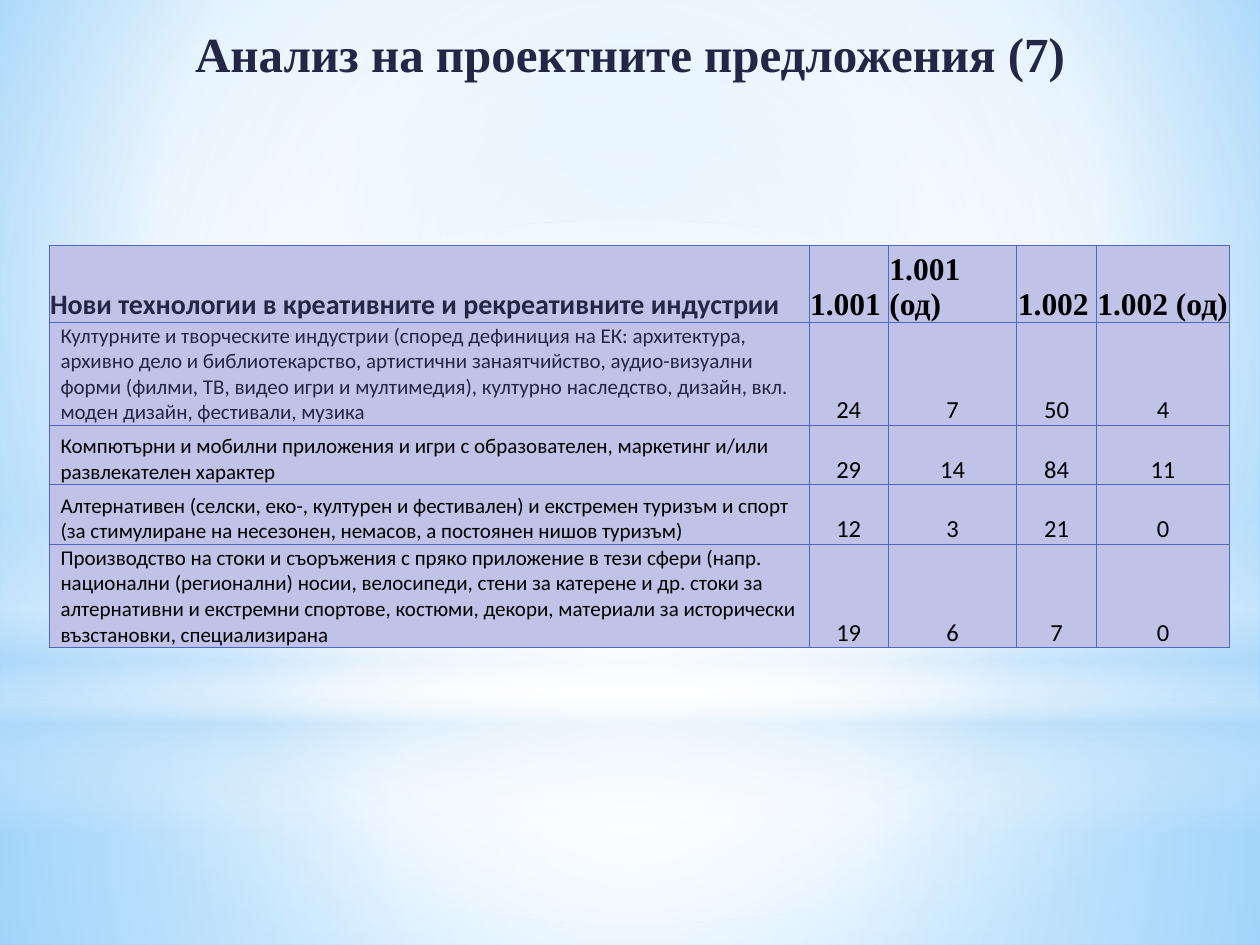
from lxml import etree
from pptx import Presentation
from pptx.dml.color import RGBColor
from pptx.enum.shapes import MSO_SHAPE
from pptx.enum.text import MSO_ANCHOR, PP_ALIGN
from pptx.oxml.ns import qn
from pptx.util import Cm, Pt

RECT, OVAL = MSO_SHAPE.RECTANGLE, MSO_SHAPE.OVAL
LEFT, MID = PP_ALIGN.LEFT, PP_ALIGN.CENTER
LOW, HALF = MSO_ANCHOR.BOTTOM, MSO_ANCHOR.MIDDLE

HUES = {
    "navy": "212745", "black": "000000", "white": "FFFFFF", "lilac": "C1C2E8",
    "line": "4E67C8", "sky": "B4DCFA", "pale": "9ED5FF", "blue": "5BB9FF",
}
SERIF, SANS = "Times New Roman", "Calibri"

HEAD = ["Нови технологии в креативните и рекреативните индустрии",
        "1.001", "1.001 (од)", "1.002", "1.002 (од)"]
BODY = [
    ["Културните и творческите индустрии (според дефиниция на ЕК: архитектура, "
     "архивно дело и библиотекарство, артистични занаятчийство, аудио-визуални "
     "форми (филми, ТВ, видео игри и мултимедия), културно наследство, дизайн, вкл. "
     "моден дизайн, фестивали, музика", "24", "7", "50", "4"],
    ["Компютърни и мобилни приложения и игри с образователен, маркетинг и/или "
     "развлекателен характер", "29", "14", "84", "11"],
    ["Алтернативен (селски, еко-, културен и фестивален) и екстремен туризъм и спорт "
     "(за стимулиране на несезонен, немасов, а постоянен нишов туризъм)",
     "12", "3", "21", "0"],
    ["Производство на стоки и съоръжения с пряко приложение в тези сфери (напр. "
     "национални (регионални) носии, велосипеди, стени за катерене и др. стоки за "
     "алтернативни и екстремни спортове, костюми, декори, материали за исторически "
     "възстановки, специализирана", "19", "6", "7", "0"],
]
COLS = [15.32, 1.6, 2.59, 1.6, 2.69]
ROWS = [1.43, 2.08, 1.2, 1.2, 2.08]
CORE = (50, 50, 50, 50)


class Deck:
    def __init__(self, wide, high):
        self.file = Presentation()
        self.file.slide_width, self.file.slide_height = Cm(wide), Cm(high)
        self.slide = self.file.slides.add_slide(self.file.slide_layouts[6])

    def blend(self, host, stops, core=None):
        grad = etree.Element(qn("a:gradFill"), rotWithShape="1")
        group = etree.SubElement(grad, qn("a:gsLst"))
        for place, hue, solid in stops:
            stop = etree.SubElement(group, qn("a:gs"), pos=str(place * 1000))
            tint = etree.SubElement(stop, qn("a:srgbClr"), val=HUES[hue])
            if solid < 100:
                etree.SubElement(tint, qn("a:alpha"), val=str(solid * 1000))
        if core:
            ring = etree.SubElement(grad, qn("a:path"), path="circle")
            sides = {side: str(n * 1000) for side, n in zip("ltrb", core)}
            etree.SubElement(ring, qn("a:fillToRect"), **sides)
        else:
            etree.SubElement(grad, qn("a:lin"), ang="5400000", scaled="0")
        host.replace(host.find(qn("a:solidFill")), grad)

    def back(self, stops, core):
        self.slide.background.fill.solid()
        self.blend(self.slide.element.find(".//" + qn("p:bgPr")), stops, core)

    def glow(self, kind, top, high, stops, core=CORE):
        shape = self.slide.shapes.add_shape(
            kind, 0, Cm(top), self.file.slide_width, Cm(high))
        shape.shadow.inherit = False
        shape.line.fill.background()
        shape.fill.solid()
        self.blend(shape.element.spPr, stops, core)

    def text(self, frame, words, size, font, hue, bold, align):
        frame.word_wrap = True
        par = frame.paragraphs[0]
        par.alignment = align
        run = par.add_run()
        run.text = words
        run.font.size, run.font.name, run.font.bold = Pt(size), font, bold
        run.font.color.rgb = RGBColor.from_string(HUES[hue])

    def title(self, words, left, top, wide, high):
        box = self.slide.shapes.add_textbox(Cm(left), Cm(top), Cm(wide), Cm(high))
        box.text_frame.vertical_anchor = HALF
        self.text(box.text_frame, words, 28, SERIF, "navy", True, MID)

    def cell(self, cell, inset, *style):
        cell.margin_left = Cm(inset)
        cell.margin_top = cell.margin_right = Cm(0.02)
        cell.margin_bottom = 0
        cell.vertical_anchor = LOW
        cell.fill.solid()
        cell.fill.fore_color.rgb = RGBColor.from_string(HUES["lilac"])
        self.text(cell.text_frame, *style)
        props = cell._tc.get_or_add_tcPr()
        for i, side in enumerate("LRTB"):
            line = etree.Element(qn("a:ln" + side), w=str(Pt(0.75)))
            fill = etree.SubElement(line, qn("a:solidFill"))
            etree.SubElement(fill, qn("a:srgbClr"), val=HUES["line"])
            props.insert(i, line)

    def table(self, left, top):
        grid = self.slide.shapes.add_table(
            len(ROWS), len(COLS), Cm(left), Cm(top), Cm(sum(COLS)), Cm(sum(ROWS))).table
        for col, wide in zip(grid.columns, COLS):
            col.width = Cm(wide)
        for row, high in zip(grid.rows, ROWS):
            row.height = Cm(high)
        for c, words in enumerate(HEAD):
            style = (18, SERIF, "black") if c else (16, SANS, "navy")
            self.cell(grid.cell(0, c), 0.02, words, *style, True, LEFT)
        for r, row in enumerate(BODY, 1):
            for c, words in enumerate(row):
                inset, size, align = (0.02, 14, MID) if c else (0.23, 12, LEFT)
                hue = "navy" if (r, c) == (1, 0) else "black"
                self.cell(grid.cell(r, c), inset, words, size, SANS, hue, False, align)


def main():
    deck = Deck(25.4, 19.05)
    deck.back([(0, "pale", 100), (60, "white", 100), (100, "blue", 100)],
              (20, 10, 20, 60))
    deck.glow(RECT, 14.17, 4.88,
              [(0, "white", 91), (37, "white", 76), (100, "sky", 79)])
    deck.glow(RECT, 0, 14.17,
              [(0, "white", 89), (48, "white", 62), (100, "sky", 79)])
    deck.glow(RECT, 10.46, 6.35,
              [(0, "white", 0), (29, "white", 30), (45, "sky", 40),
               (55, "white", 26), (65, "sky", 60), (100, "white", 0)], None)
    deck.glow(OVAL, 4.45, 14.17, [(0, "white", 100), (56, "white", 0)])
    deck.title("Анализ на проектните предложения (7)", 0.5, 0, 24.4, 2.13)
    deck.table(0.99, 4.95)
    deck.file.save("out.pptx")


if __name__ == "__main__":
    main()
